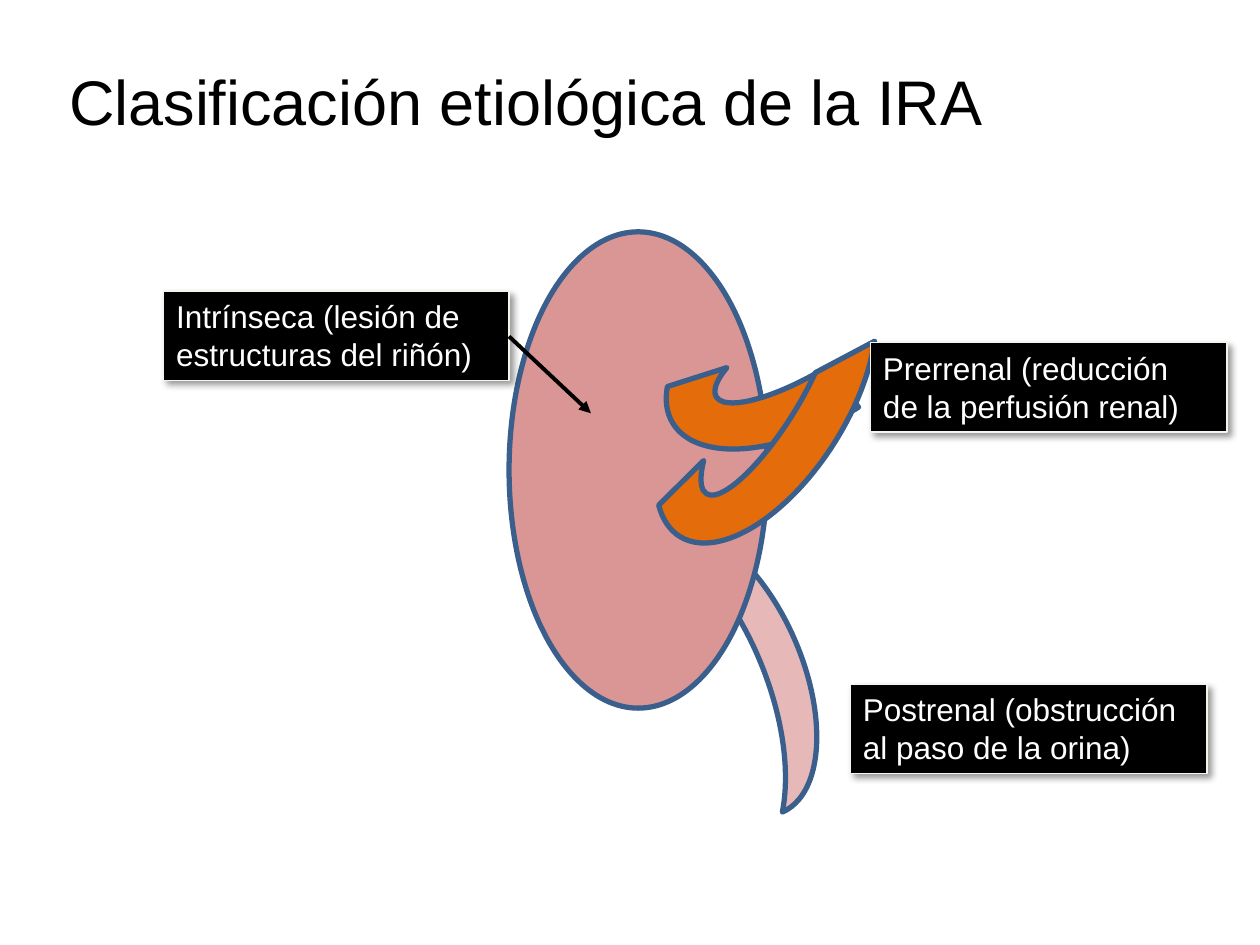
import pptx
import pptx.util
import pptx.dml.color
import pptx.enum.shapes
import pptx.enum.text
import pptx.oxml
import pptx.oxml.ns

Inches = pptx.util.Inches
Pt = pptx.util.Pt
kinds = pptx.enum.shapes.MSO_SHAPE
anchor = pptx.enum.text.MSO_ANCHOR
align = pptx.enum.text.PP_ALIGN
spaces = pptx.oxml.ns.nsdecls("a")


def tint(code):
    return pptx.dml.color.RGBColor.from_string(code)


def write(shape, text, form, size, code, side):
    frame = shape.text_frame
    for name, value in form.items():
        setattr(frame, name, value)
    frame.text = text
    face = {"name": "Arial", "size": Pt(size), "bold": False}
    for para in frame.paragraphs:
        para.alignment = side
        for name, value in face.items():
            setattr(para.font, name, value)
        para.font.color.rgb = tint(code)


deck = pptx.Presentation()
deck.slide_width = Inches(10)
deck.slide_height = Inches(7.5)
slide = deck.slides.add_slide(deck.slide_layouts[6])
shapes = slide.shapes

title = shapes.add_textbox(Inches(0.06), Inches(0.43), Inches(8.23), Inches(0.73))
form = {"word_wrap": True, "vertical_anchor": anchor.MIDDLE}
write(title, "Clasificación etiológica de la IRA", form, 36, "000000", align.CENTER)

organs = [
    (kinds.MOON, (5.69, 3.97, 0.64, 2.45), 156.3, "E6B9B8", []),
    (kinds.OVAL, (4.04, 1.84, 2.05, 3.78), 0, "D99694", []),
    (kinds.BLOCK_ARC, (5.16, 2.06, 2.52, 1.3), 149.2, "E46C0A",
     [158.23, 7.9, 0.31]),
    (kinds.BLOCK_ARC, (4.79, 2.52, 2.58, 1.29), 122.1, "E46C0A",
     [125.99, 7.9, 0.31]),
]
for kind, box, turn, code, bends in organs:
    organ = shapes.add_shape(kind, *map(Inches, box))
    organ.rotation = turn
    organ.shadow.inherit = False
    organ.fill.solid()
    organ.fill.fore_color.rgb = tint(code)
    organ.line.color.rgb = tint("3A5F8C")
    organ.line.width = Pt(3)
    for spot, bend in enumerate(bends):
        organ.adjustments[spot] = bend

labels = [
    ("Prerrenal (reducción\nde la perfusión renal)", 6.91, 2.72, 2.83),
    ("Postrenal (obstrucción\nal paso de la orina)", 6.75, 5.43, 2.83),
    ("Intrínseca (lesión de estructuras del riñón)", 1.3, 2.31, 2.74),
]
form = {
    "word_wrap": True,
    "vertical_anchor": anchor.TOP,
    "auto_size": pptx.enum.text.MSO_AUTO_SIZE.SHAPE_TO_FIT_TEXT,
}
shade = (
    f'<a:outerShdw {spaces} blurRad="{Pt(4)}" dist="{Pt(3)}" dir="2700000" '
    'algn="tl" rotWithShape="0"><a:srgbClr val="000000">'
    '<a:alpha val="40000"/></a:srgbClr></a:outerShdw>'
)
for text, left, top, width in labels:
    label = shapes.add_shape(
        kinds.RECTANGLE, Inches(left), Inches(top), Inches(width), Inches(0.71))
    label.shadow.inherit = False
    label.fill.solid()
    label.fill.fore_color.rgb = tint("000000")
    label.line.color.rgb = tint("F5F4ED")
    label.line.width = Pt(0.75)
    glow = label.element.spPr.find(pptx.oxml.ns.qn("a:effectLst"))
    glow.append(pptx.oxml.parse_xml(shade))
    write(label, text, form, 18, "FFFFFF", align.LEFT)

arrow = shapes.add_connector(
    pptx.enum.shapes.MSO_CONNECTOR.STRAIGHT,
    Inches(4.04), Inches(2.67), Inches(4.69), Inches(3.28))
arrow.line.color.rgb = tint("000000")
arrow.line.width = Pt(2.25)
stroke = arrow.element.spPr.find(pptx.oxml.ns.qn("a:ln"))
stroke.append(pptx.oxml.parse_xml(f'<a:tailEnd {spaces} type="triangle"/>'))
arrow.element.spPr.append(pptx.oxml.parse_xml(f"<a:effectLst {spaces}/>"))

deck.save("out.pptx")
